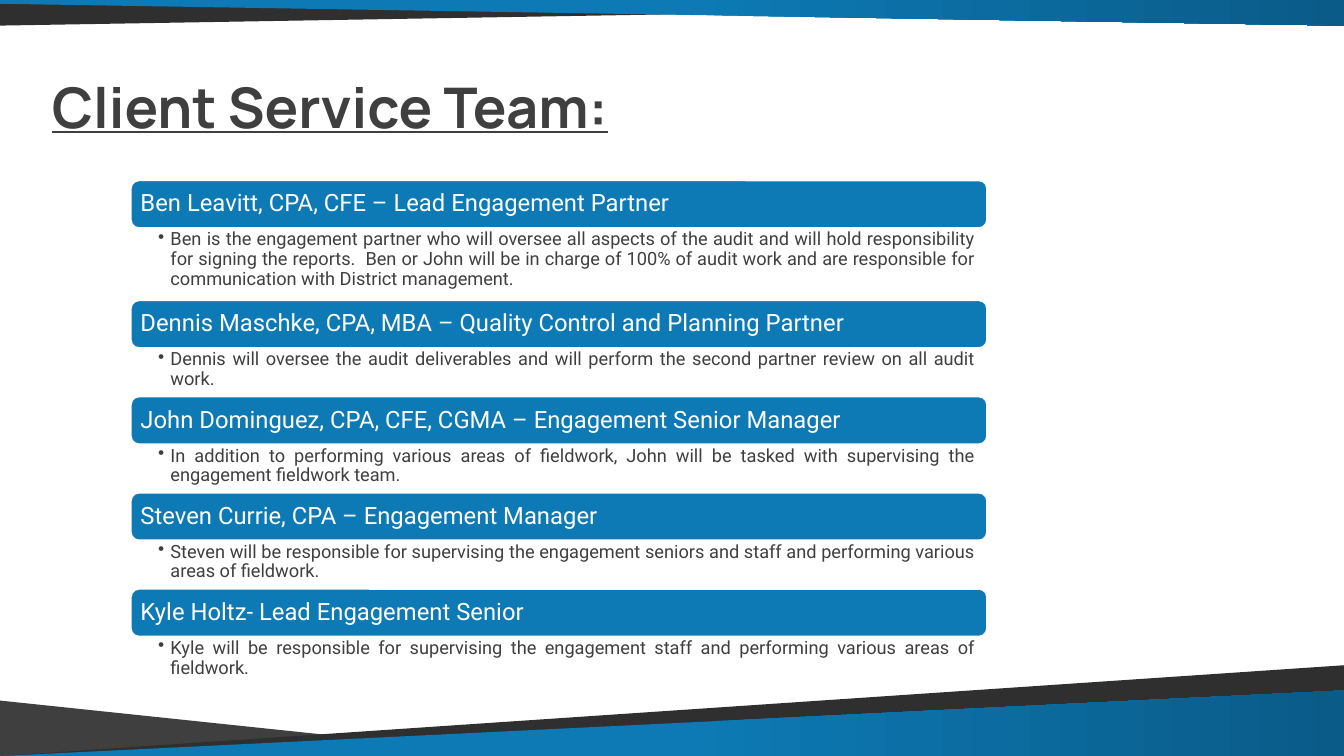
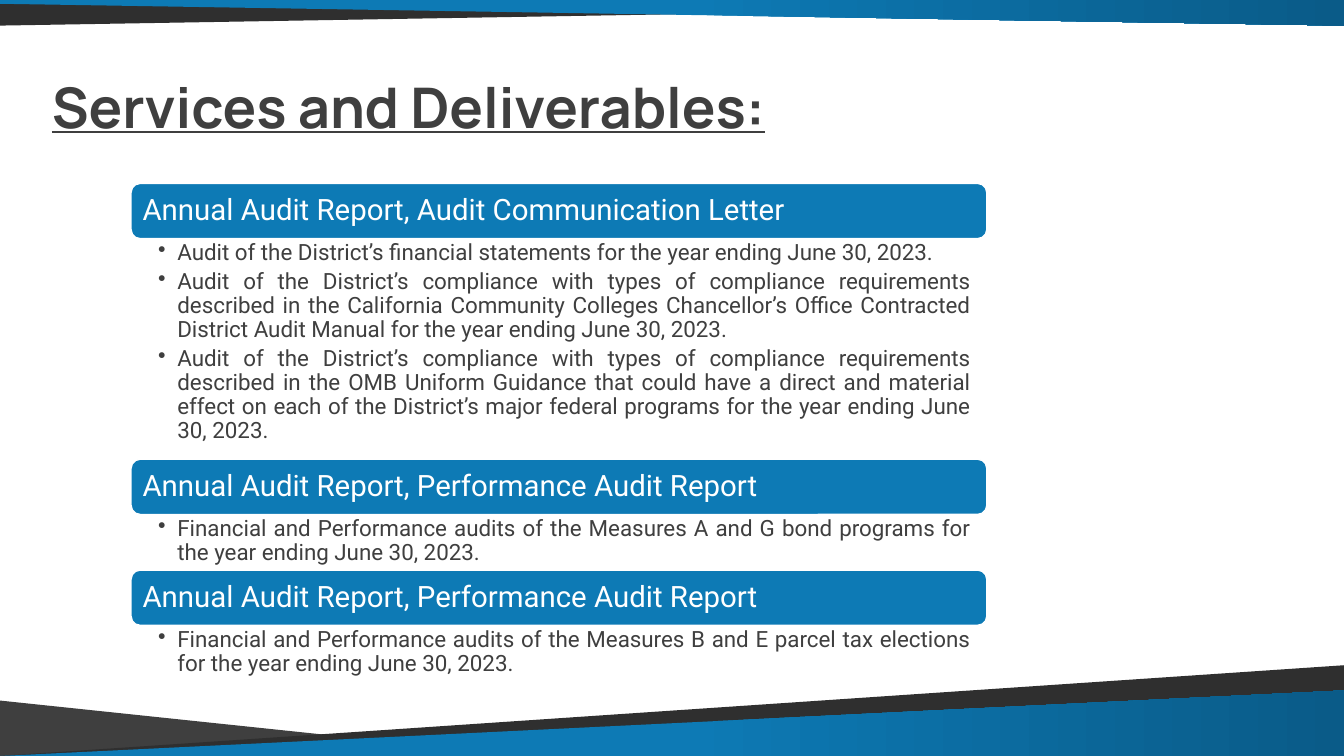
from dataclasses import dataclass

from lxml.etree import SubElement
from pptx import Presentation
from pptx.dml.color import RGBColor
from pptx.enum.shapes import MSO_SHAPE
from pptx.enum.text import MSO_ANCHOR, PP_ALIGN
from pptx.oxml.ns import qn
from pptx.util import Pt

COLORS = {
    "blue": "0D7AB5",
    "deep_blue": "0A5B88",
    "charcoal": "2F2F2F",
    "grey": "3F3F3F",
    "white": "FFFFFF",
}
TITLE_FONT = "Manrope"
BODY_FONT = "Roboto"
SLIDE_W, SLIDE_H = 960, 540
TITLE_BOX = (30, 36, 896, 86)
LIST_LEFT, LIST_WIDTH = 93.6, 611.3


@dataclass
class ListStyle:
    heading_height: float
    heading_size: float
    heading_inset: float
    body_size: float
    body_insets: tuple
    hanging: float


TEAM_STYLE = ListStyle(33.8, 17, 5.1, 13, (19.4, 1.6, 9.2, 1.6), 8.8)
SERVICE_STYLE = ListStyle(39.5, 21, 6.3, 16, (19.4, 2, 11.4, 2), 13.7)

TEAM = [
    ("Ben Leavitt, CPA, CFE – Lead Engagement Partner", 51.9, [
        "Ben is the engagement partner who will oversee all aspects of the audit "
        "and will hold responsibility for signing the reports.  Ben or John will "
        "be in charge of 100% of audit work and are responsible for communication "
        "with District management."]),
    ("Dennis Maschke, CPA, MBA – Quality Control and Planning Partner", 34.9, [
        "Dennis will oversee the audit deliverables and will perform the second "
        "partner review on all audit work."]),
    ("John Dominguez, CPA, CFE, CGMA – Engagement Senior Manager", 34.9, [
        "In addition to performing various areas of fieldwork, John will be tasked "
        "with supervising the engagement fieldwork team."]),
    ("Steven Currie, CPA – Engagement Manager", 34.9, [
        "Steven will be responsible for supervising the engagement seniors and "
        "staff and performing various areas of fieldwork."]),
    ("Kyle Holtz- Lead Engagement Senior", 34.9, [
        "Kyle will be responsible for supervising the engagement staff and "
        "performing various areas of fieldwork."]),
]

SERVICES = [
    ("Annual Audit Report, Audit Communication Letter", 157.5, [
        "Audit of the District’s financial statements for the year ending "
        "June 30, 2023.",
        "Audit of the District’s compliance with types of compliance requirements "
        "described in the California Community Colleges Chancellor’s Office "
        "Contracted District Audit Manual for the year ending June 30, 2023.",
        "Audit of the District’s compliance with types of compliance requirements "
        "described in the OMB Uniform Guidance that could have a direct and "
        "material effect on each of the District’s major federal programs for the "
        "year ending June 30, 2023."]),
    ("Annual Audit Report, Performance Audit Report", 39.7, [
        "Financial and Performance audits of the Measures A and G bond programs "
        "for the year ending June 30, 2023."]),
    ("Annual Audit Report, Performance Audit Report", 39.7, [
        "Financial and Performance audits of the Measures B and E parcel tax "
        "elections for the year ending June 30, 2023."]),
]


def rgb(name):
    return RGBColor.from_string(COLORS[name])


def set_font(paragraph, name, size, color):
    paragraph.line_spacing = 0.9
    paragraph.font.name = name
    paragraph.font.size = Pt(size)
    paragraph.font.color.rgb = rgb(color)


def set_insets(frame, left, top, right, bottom):
    frame.margin_left, frame.margin_top = Pt(left), Pt(top)
    frame.margin_right, frame.margin_bottom = Pt(right), Pt(bottom)


def add_text_frame(slide, box):
    frame = slide.shapes.add_textbox(*(Pt(length) for length in box)).text_frame
    frame.word_wrap = True
    return frame


def add_band(slide, box, corners, color, end_color=None):
    left, top, width, height = box
    points = [(Pt(left + x * width), Pt(top + y * height)) for x, y in corners]
    outline = slide.shapes.build_freeform(*points[0], scale=1.0)
    outline.add_line_segments(points[1:], close=True)
    band = outline.convert_to_shape()
    band.shadow.inherit = False
    band.line.fill.background()
    if end_color is None:
        band.fill.solid()
        band.fill.fore_color.rgb = rgb(color)
        return
    band.fill.gradient()
    band.fill.gradient_angle = 0
    stops = zip(band.fill.gradient_stops, (0.51, 1), (color, end_color))
    for stop, position, stop_color in stops:
        stop.position = position
        stop.color.rgb = rgb(stop_color)


def add_bands(slide, width, height):
    rising = [(1, 0), (0, 1), (1, 1)]
    falling = [(0, 0), (0, 1), (1, 1)]
    add_band(slide, (0, height - 39.6, 377, 39.6), falling, "grey")
    add_band(slide, (0, height - 64.8, width, 64.8), rising, "charcoal")
    add_band(slide, (0, height - 46.8, width, 46.8), rising, "blue", "deep_blue")
    header = (0, 0, width, 18.3)
    add_band(slide, header, [(0, 0), (1, 0), (1, 0.12), (0, 1)], "charcoal")
    add_band(slide, header, [(0, 0), (0, 0.15), (1, 1), (1, 0)],
             "blue", "deep_blue")


def add_title(slide, box, title):
    frame = add_text_frame(slide, box)
    frame.vertical_anchor = MSO_ANCHOR.MIDDLE
    paragraph = frame.paragraphs[0]
    paragraph.text = title
    set_font(paragraph, TITLE_FONT, 40, "grey")
    paragraph.font.bold = True
    paragraph.font.underline = True


def add_heading(slide, box, heading, style):
    bar = slide.shapes.add_shape(MSO_SHAPE.ROUNDED_RECTANGLE,
                                 *(Pt(length) for length in box))
    bar.shadow.inherit = False
    bar.fill.solid()
    bar.fill.fore_color.rgb = rgb("blue")
    bar.line.color.rgb = rgb("white")
    bar.line.width = Pt(1)
    frame = bar.text_frame
    frame.vertical_anchor = MSO_ANCHOR.MIDDLE
    set_insets(frame, *[style.heading_inset] * 4)
    paragraph = frame.paragraphs[0]
    paragraph.text = heading
    paragraph.alignment = PP_ALIGN.LEFT
    set_font(paragraph, BODY_FONT, style.heading_size, "white")


def add_bullets(slide, box, bullets, style):
    frame = add_text_frame(slide, box)
    set_insets(frame, *style.body_insets)
    for index, bullet in enumerate(bullets):
        paragraph = frame.add_paragraph() if index else frame.paragraphs[0]
        paragraph.text = bullet
        paragraph.alignment = PP_ALIGN.JUSTIFY
        properties = paragraph._p.get_or_add_pPr()
        properties.set("marL", str(Pt(style.hanging)))
        properties.set("indent", str(-Pt(style.hanging)))
        SubElement(properties, qn("a:buChar")).set("char", "•")
        paragraph.space_after = Pt(style.body_size * 0.2)
        set_font(paragraph, BODY_FONT, style.body_size, "grey")


def add_sections(slide, left, top, width, sections, style):
    for heading, body_height, bullets in sections:
        add_heading(slide, (left, top, width, style.heading_height), heading, style)
        top += style.heading_height
        add_bullets(slide, (left, top, width, body_height), bullets, style)
        top += body_height


def add_list_slide(deck, title, top, sections, style):
    slide = deck.slides.add_slide(deck.slide_layouts[6])
    add_bands(slide, SLIDE_W, SLIDE_H)
    add_title(slide, TITLE_BOX, title)
    add_sections(slide, LIST_LEFT, top, LIST_WIDTH, sections, style)


def main():
    deck = Presentation()
    deck.slide_width, deck.slide_height = Pt(SLIDE_W), Pt(SLIDE_H)
    add_list_slide(deck, "Client Service Team:", 129, TEAM, TEAM_STYLE)
    add_list_slide(deck, "Services and Deliverables:", 131, SERVICES, SERVICE_STYLE)
    deck.save("out.pptx")


if __name__ == "__main__":
    main()
